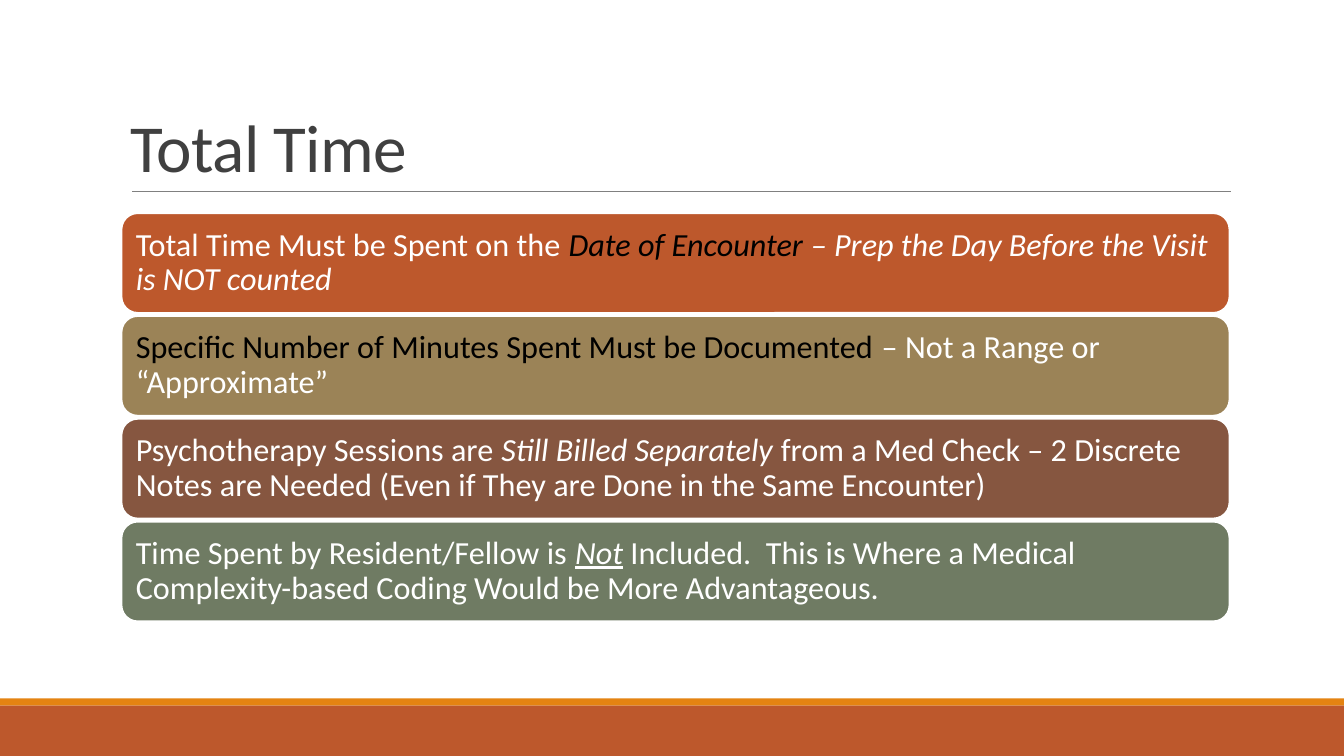
from dataclasses import dataclass

from pptx import Presentation
from pptx import util as u
from pptx.dml.color import RGBColor
from pptx.enum import shapes, text
from pptx.oxml.ns import qn
from pptx.shapes.autoshape import Shape
from pptx.slide import Slide
from lxml import etree


@dataclass(frozen=True)
class Theme:
    font: str = "Calibri"
    title_size: float = 48
    body_size: float = 23
    title: str = "404040"
    rule: str = "808080"
    white: str = "FFFFFF"
    black: str = "000000"
    orange: str = "E48312"
    rust: str = "BD582C"
    tan: str = "9B8357"
    brown: str = "865640"
    green: str = "6F7B63"


THEME = Theme()


@dataclass(frozen=True)
class Phrase:
    words: str
    color: str = THEME.white
    italic: bool = False
    underline: bool = False


@dataclass(frozen=True)
class Point:
    fill: str
    phrases: tuple[Phrase, ...]


@dataclass(frozen=True)
class Band:
    top: float
    height: float
    fill: str


SLIDE_WIDTH, SLIDE_HEIGHT = 13.33, 7.5
LEFT, WIDTH = 1.2, 11
POINT_TOP, POINT_HEIGHT, POINT_PITCH = 2.11, 1, 1.02

BANDS = (Band(6.93, 0.07, THEME.orange), Band(7, 0.5, THEME.rust))

POINTS = (
    Point(THEME.rust, (
        Phrase("Total Time Must be Spent on the "),
        Phrase("Date of Encounter ", THEME.black, italic=True),
        Phrase("– Prep the Day Before the Visit is NOT counted", italic=True),
    )),
    Point(THEME.tan, (
        Phrase("Specific Number of Minutes Spent Must be Documented ", THEME.black),
        Phrase("– Not a Range or “Approximate”"),
    )),
    Point(THEME.brown, (
        Phrase("Psychotherapy Sessions are "),
        Phrase("Still Billed Separately ", italic=True),
        Phrase("from a Med Check – 2 Discrete Notes are Needed "
               "(Even if They are Done in the Same Encounter)"),
    )),
    Point(THEME.green, (
        Phrase("Time Spent by Resident/Fellow is "),
        Phrase("Not", italic=True, underline=True),
        Phrase(" Included.  This is Where a Medical Complexity-based Coding "
               "Would be More Advantageous."),
    )),
)


def add_filled_shape(slide: Slide, kind: shapes.MSO_SHAPE, left: float, top: float,
                     width: float, height: float, fill: str) -> Shape:
    shape = slide.shapes.add_shape(kind, u.Inches(left), u.Inches(top),
                                   u.Inches(width), u.Inches(height))
    shape.shadow.inherit = False
    shape.fill.solid()
    shape.fill.fore_color.rgb = RGBColor.from_string(fill)
    shape.line.fill.background()
    return shape


def add_title(slide: Slide, words: str) -> None:
    box = slide.shapes.add_textbox(u.Inches(LEFT), u.Inches(0.31),
                                   u.Inches(WIDTH), u.Inches(1.59))
    frame = box.text_frame
    frame.word_wrap = True
    frame.vertical_anchor = text.MSO_ANCHOR.BOTTOM
    frame.text = words
    paragraph = frame.paragraphs[0]
    paragraph.line_spacing = 0.85
    font = paragraph.runs[0].font
    font.name = THEME.font
    font.size = u.Pt(THEME.title_size)
    font.color.rgb = RGBColor.from_string(THEME.title)
    paragraph.runs[0]._r.get_or_add_rPr().set("spc", "-50")


def add_title_rule(slide: Slide) -> None:
    rule = slide.shapes.add_connector(shapes.MSO_CONNECTOR.STRAIGHT, u.Inches(1.31),
                                      u.Inches(1.9), u.Inches(12.21), u.Inches(1.9))
    rule.line.color.rgb = RGBColor.from_string(THEME.rule)
    rule.line.width = u.Pt(0.5)
    etree.SubElement(rule._element.spPr, qn("a:effectLst"))


def add_point(slide: Slide, point: Point, top: float) -> None:
    shape = add_filled_shape(slide, shapes.MSO_SHAPE.ROUNDED_RECTANGLE,
                             LEFT, top, WIDTH, POINT_HEIGHT, point.fill)
    shape.line.color.rgb = RGBColor.from_string(THEME.white)
    shape.line.width = u.Pt(2)
    frame = shape.text_frame
    frame.word_wrap = True
    frame.vertical_anchor = text.MSO_ANCHOR.MIDDLE
    frame.margin_left = frame.margin_right = u.Inches(0.1)
    frame.margin_top = frame.margin_bottom = u.Inches(0.1)
    paragraph = frame.paragraphs[0]
    paragraph.alignment = text.PP_ALIGN.LEFT
    paragraph.line_spacing = 0.9
    for phrase in point.phrases:
        run = paragraph.add_run()
        run.text = phrase.words
        run.font.name = THEME.font
        run.font.size = u.Pt(THEME.body_size)
        run.font.color.rgb = RGBColor.from_string(phrase.color)
        run.font.italic = phrase.italic
        run.font.underline = phrase.underline


def main() -> None:
    presentation = Presentation()
    presentation.slide_width = u.Inches(SLIDE_WIDTH)
    presentation.slide_height = u.Inches(SLIDE_HEIGHT)
    slide = presentation.slides.add_slide(presentation.slide_layouts[6])
    add_title_rule(slide)
    add_title(slide, "Total Time")
    for band in BANDS:
        add_filled_shape(slide, shapes.MSO_SHAPE.RECTANGLE,
                         0, band.top, SLIDE_WIDTH, band.height, band.fill)
    for index, point in enumerate(POINTS):
        add_point(slide, point, POINT_TOP + index * POINT_PITCH)
    presentation.save("out.pptx")


if __name__ == "__main__":
    main()
